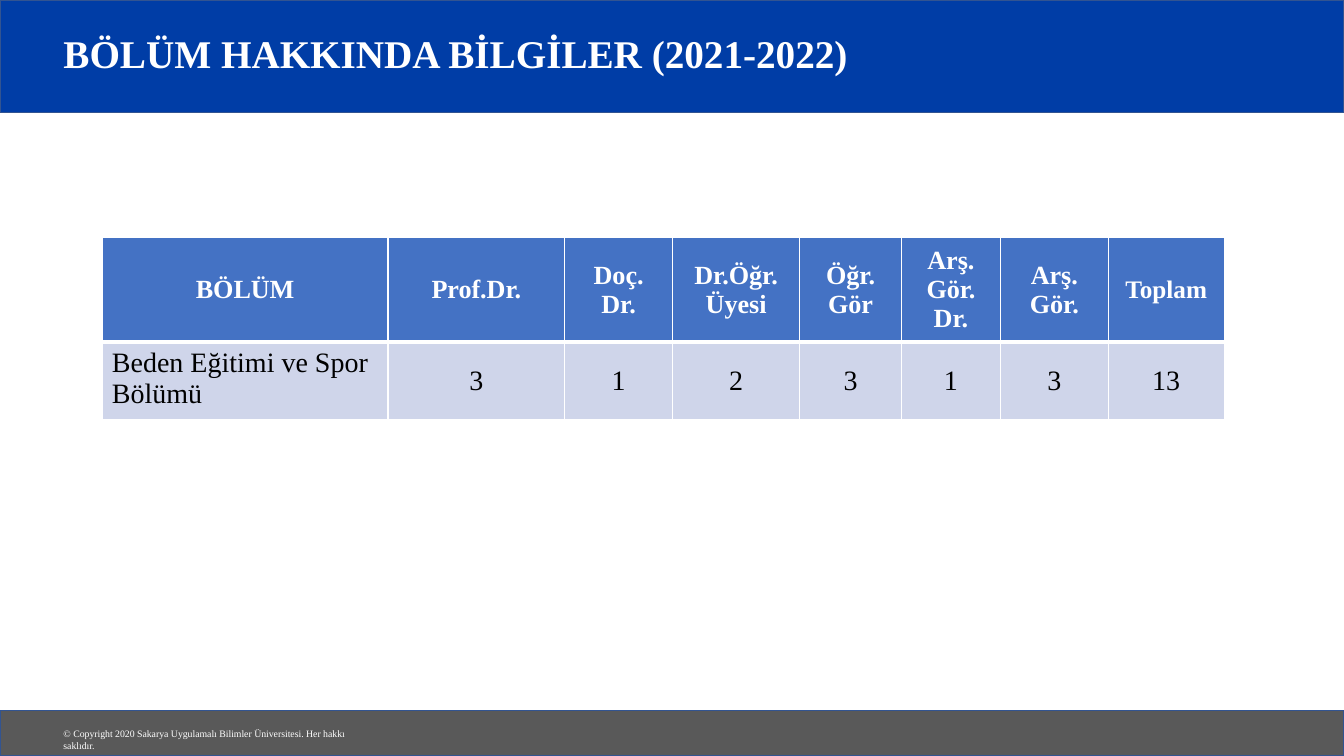
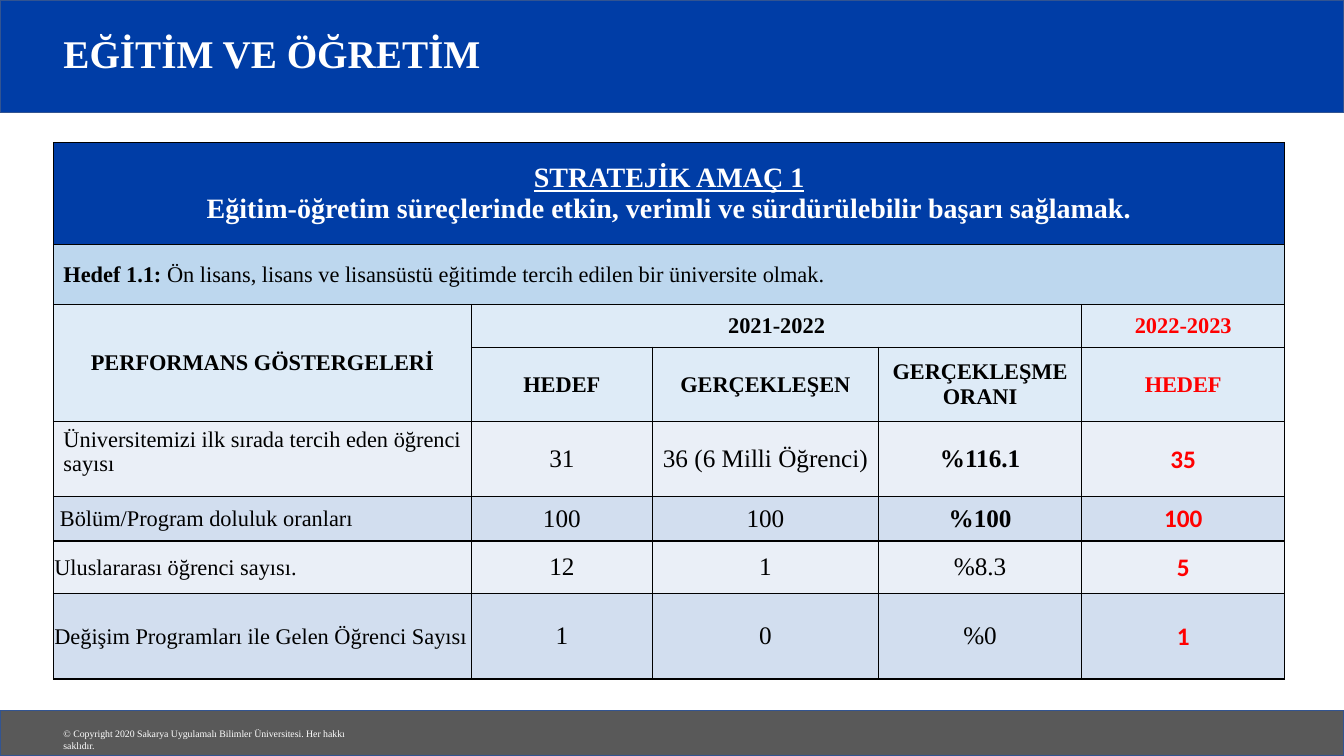
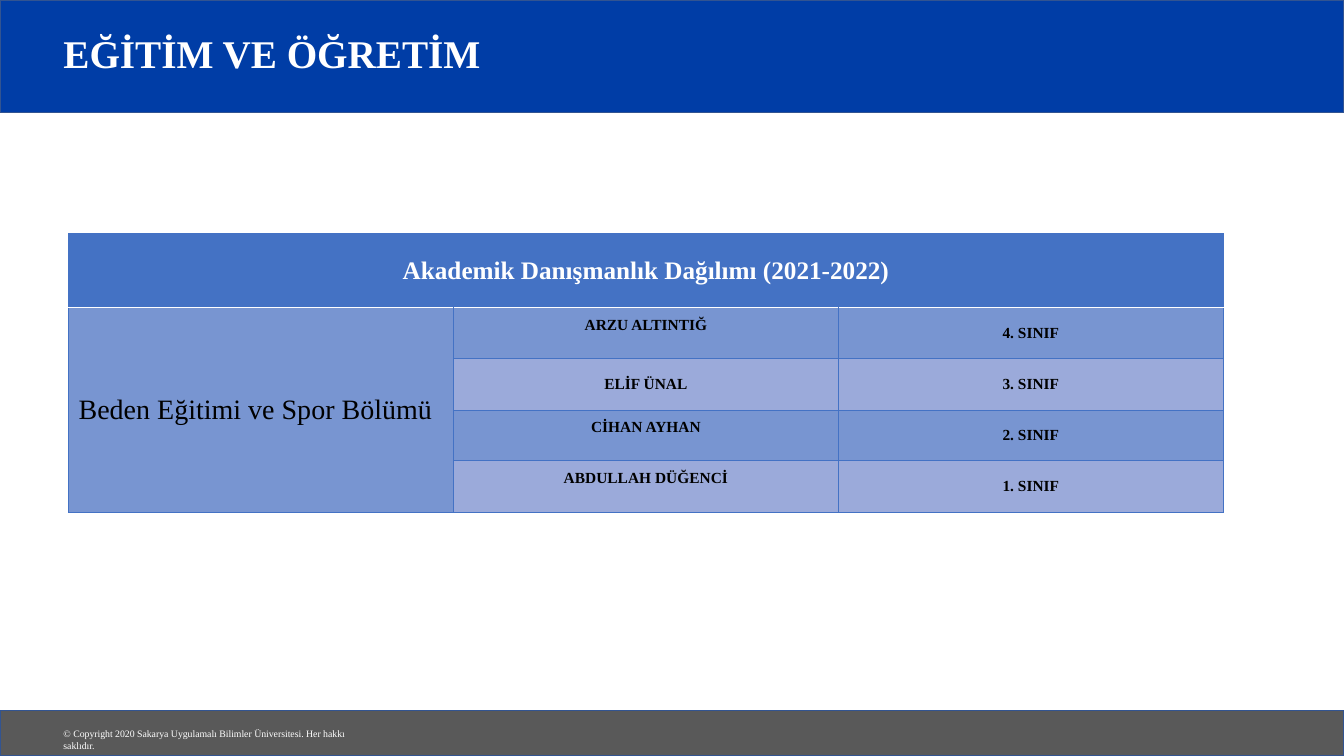
from lxml.etree import SubElement
from pptx import Presentation
from pptx.dml.color import RGBColor
from pptx.enum.shapes import MSO_SHAPE as Shape
from pptx.enum.text import MSO_ANCHOR as Anchor, PP_ALIGN as Align
from pptx.oxml.ns import qn
from pptx.util import Cm, Pt

WHITE = RGBColor(0xFF, 0xFF, 0xFF)
BLACK = RGBColor(0, 0, 0)
RED = RGBColor(0xFF, 0, 0)
NAVY = RGBColor(0x00, 0x3D, 0xA6)
EDGE = RGBColor(0x32, 0x54, 0x91)
GREY = RGBColor(0x59, 0x59, 0x59)
BLUE = RGBColor(0x44, 0x72, 0xC4)
LILAC = RGBColor(0xCF, 0xD5, 0xEA)
SKY = RGBColor(0xBD, 0xD7, 0xEE)
ICE = RGBColor(0xDE, 0xEB, 0xF7)
PALE = RGBColor(0xEA, 0xEF, 0xF7)
MIST = RGBColor(0xD2, 0xDE, 0xEF)
DEEP = RGBColor(0x78, 0x95, 0xD1)
SOFT = RGBColor(0x9B, 0xAA, 0xDA)

SERIF = "Times New Roman"
WIDTH, HEIGHT = 33.87, 19.05
LEFT = 1.35
PAD = (0.25, 0.13, 0.25, 0.13)
THIN = (0.08,) * 4
NONE = (0.02, 0.02, 0.02, 0)


class Deck:
    def __init__(self):
        self.prs = Presentation()
        self.prs.slide_width, self.prs.slide_height = Cm(WIDTH), Cm(HEIGHT)
        self.slide = self.grid = None

    def page(self, title):
        """Start a slide with its bands, title and footer."""
        self.slide = self.prs.slides.add_slide(self.prs.slide_layouts[6])
        self.band(0, 2.84, NAVY)
        self.band(17.9, HEIGHT - 17.9, GREY)
        self.label((LEFT, 18.21, 8.36, 0.56),
                   "© Copyright 2020 Sakarya Uygulamalı Bilimler Üniversitesi. "
                   "Her hakkı saklıdır.", 7)
        head = self.label((LEFT, 0.48, 28.02, 1.85), title, 28, bold=True)
        head.vertical_anchor = Anchor.MIDDLE
        head.paragraphs[0].line_spacing = 0.9

    def band(self, top, height, fill):
        bar = self.slide.shapes.add_shape(
            Shape.RECTANGLE, 0, Cm(top), Cm(WIDTH), Cm(height))
        bar.shadow.inherit = False
        bar.fill.solid()
        bar.fill.fore_color.rgb = fill
        bar.line.color.rgb = EDGE
        bar.line.width = Pt(1)

    def label(self, box, text, size, bold=False):
        frame = self.slide.shapes.add_textbox(*map(Cm, box)).text_frame
        frame.word_wrap = True
        self.style(frame, text, size, WHITE, bold)
        return frame

    def style(self, frame, text, size, color, bold, align=Align.LEFT, face=SERIF):
        """Set the text of a frame and the look of its paragraphs."""
        frame.text = text
        for para in frame.paragraphs:
            para.alignment = align
            font = para.font
            font.name, font.size, font.bold = face, Pt(size), bold
            font.color.rgb = color

    def table(self, left, top, cols, rows, edge, rule=None):
        """Add an empty grid; edge and rule (under row 0) are (colour, points)."""
        self.grid = self.slide.shapes.add_table(
            len(rows), len(cols), Cm(left), Cm(top), Cm(sum(cols)), Cm(sum(rows))).table
        self.grid.first_row = self.grid.horz_banding = False
        for col, width in zip(self.grid.columns, cols):
            col.width = Cm(width)
        for row, height in zip(self.grid.rows, rows):
            row.height = Cm(height)
        for r in range(len(rows)):
            for c in range(len(cols)):
                for side in "LRTB":
                    ruled = rule and (r, side) in ((0, "B"), (1, "T"))
                    self.border(self.grid.cell(r, c), side, *(rule if ruled else edge))

    def border(self, cell, side, color, width):
        props = cell._tc.get_or_add_tcPr()
        line = SubElement(props, qn(f"a:ln{side}"), w=str(Pt(width)))
        fill = SubElement(line, qn("a:solidFill"))
        SubElement(fill, qn("a:srgbClr"), val=str(color))

    def cell(self, r, c, text, size, fill, color=BLACK, bold=False, align=Align.CENTER,
             anchor=Anchor.MIDDLE, pad=PAD, span=(1, 1), face=SERIF):
        """Fill one cell, merged over span (rows, columns); return its paragraphs."""
        cell = self.grid.cell(r, c)
        if span != (1, 1):
            cell.merge(self.grid.cell(r + span[0] - 1, c + span[1] - 1))
        for i in range(span[0]):
            for j in range(span[1]):
                part = self.grid.cell(r + i, c + j).fill
                part.solid()
                part.fore_color.rgb = fill
        (cell.margin_left, cell.margin_top,
         cell.margin_right, cell.margin_bottom) = map(Cm, pad)
        cell.vertical_anchor = anchor
        self.style(cell.text_frame, text, size, color, bold, align, face)
        return cell.text_frame.paragraphs


def staff(deck):
    deck.page("BÖLÜM HAKKINDA BİLGİLER (2021-2022)")
    deck.table(2.57, 5.99, (7.21, 4.45, 2.72, 3.2, 2.57, 2.49, 2.72, 2.92),
               (2.47, 1.82), (WHITE, 1), (WHITE, 3))
    heads = ("BÖLÜM", "Prof.Dr.", "Doç. Dr.", "Dr.Öğr.\nÜyesi", "Öğr. Gör",
             "Arş. Gör. Dr.", "Arş. Gör.", "Toplam")
    for c, head in enumerate(heads):
        size = 18 if head == "Toplam" else 18.67
        deck.cell(0, c, head, size, BLUE, WHITE, True)
    deck.cell(1, 0, "Beden Eğitimi ve Spor Bölümü", 20, LILAC,
              align=Align.LEFT, anchor=Anchor.TOP)
    for c, count in enumerate((3, 1, 2, 3, 1, 3, 13), 1):
        deck.cell(1, c, str(count), 20, LILAC)


def goals(deck):
    deck.page("EĞİTİM VE ÖĞRETİM")
    deck.table(LEFT, 3.6, (10.53, 4.56, 5.7, 5.12, 5.12),
               (2.57, 1.5, 1.08, 1.88, 1.88, 1.12, 1.32, 2.16), (BLACK, 1))
    aim = deck.cell(0, 0, "STRATEJİK AMAÇ 1\nEğitim-öğretim süreçlerinde etkin, verimli "
                    "ve sürdürülebilir başarı sağlamak.", 20, NAVY, WHITE, True, span=(1, 5))
    aim[0].font.underline = True
    goal = deck.cell(1, 0, "Hedef 1.1: ", 16, SKY, align=Align.LEFT, span=(1, 5))[0]
    goal.runs[0].font.bold = True
    goal.add_run().text = ("Ön lisans, lisans ve lisansüstü eğitimde tercih edilen "
                           "bir üniversite olmak.")

    heads = ((2, 0, "PERFORMANS GÖSTERGELERİ", (2, 1)), (2, 1, "2021-2022", (1, 3)),
             (2, 4, "2022-2023", (1, 1)), (3, 1, "HEDEF", (1, 1)),
             (3, 2, "GERÇEKLEŞEN", (1, 1)), (3, 3, "GERÇEKLEŞME ORANI", (1, 1)),
             (3, 4, "HEDEF", (1, 1)))
    for r, c, head, span in heads:
        deck.cell(r, c, head, 16, ICE, RED if c == 4 else BLACK, True, span=span)

    rows = (
        ("Üniversitemizi ilk sırada tercih eden öğrenci sayısı",
         "31", "36 (6 Milli Öğrenci)", "%116.1", "35", PAD, Anchor.TOP),
        ("Bölüm/Program doluluk oranları",
         "100", "100", "%100", "100", (0.16, 0.02, 0.02, 0), Anchor.MIDDLE),
        ("Uluslararası öğrenci sayısı.", "12", "1", "%8.3", "5", NONE, Anchor.MIDDLE),
        ("Değişim Programları ile Gelen Öğrenci Sayısı",
         "1", "0", "%0", "1", NONE, Anchor.MIDDLE),
    )
    for r, (name, plan, done, rate, new, pad, anchor) in enumerate(rows, 4):
        fill = MIST if r % 2 else PALE
        deck.cell(r, 0, name, 16, fill, align=Align.LEFT, anchor=anchor, pad=pad)
        deck.cell(r, 1, plan, 18, fill, pad=THIN)
        deck.cell(r, 2, done, 18, fill, pad=THIN)
        deck.cell(r, 3, rate, 18, fill, bold=r < 6, pad=THIN)
        deck.cell(r, 4, new, 18, fill, RED, True, pad=NONE, face="Calibri")


def mentors(deck):
    deck.page("EĞİTİM VE ÖĞRETİM")
    deck.table(1.73, 5.89, (9.7,) * 3, (1.85, 1.3, 1.3, 1.27, 1.3), (BLUE, 0.5), (WHITE, 1))
    deck.cell(0, 0, "Akademik Danışmanlık Dağılımı (2021-2022)", 18, BLUE, WHITE, True,
              span=(1, 3))
    deck.cell(1, 0, "Beden Eğitimi ve Spor Bölümü", 20, DEEP, align=Align.LEFT, span=(4, 1))
    names = ("ARZU ALTINTIĞ", "ELİF ÜNAL", "CİHAN AYHAN", "ABDULLAH DÜĞENCİ")
    raised = (0.25, 0.13, 0.25, 0.53)
    for r, name in enumerate(names, 1):
        fill = DEEP if r % 2 else SOFT
        deck.cell(r, 1, name, 11, fill, bold=True, pad=PAD if r == 2 else raised)
        deck.cell(r, 2, f"{5 - r}. SINIF", 11, fill, bold=True)


def main():
    deck = Deck()
    staff(deck)
    goals(deck)
    mentors(deck)
    deck.prs.save("out.pptx")


if __name__ == "__main__":
    main()
